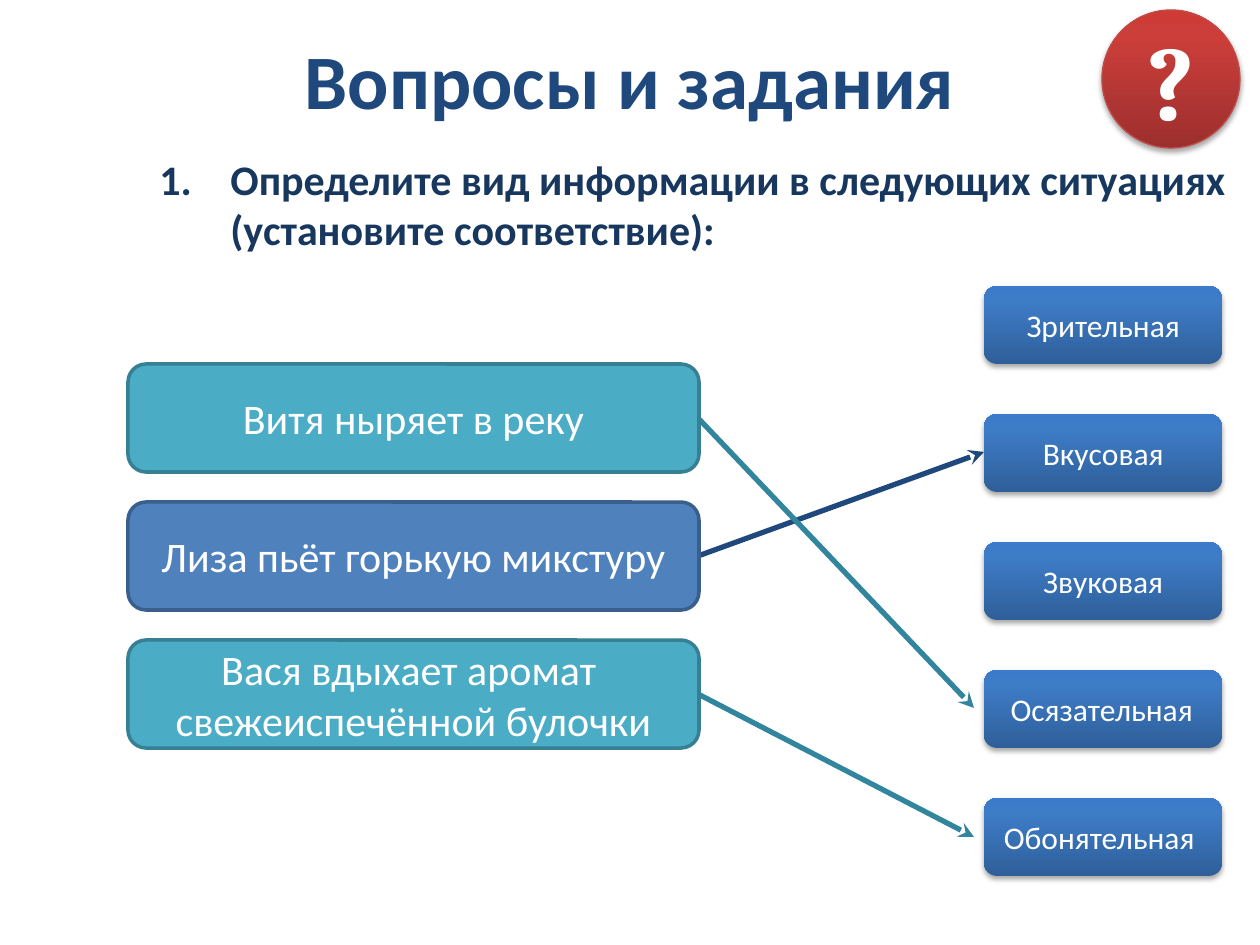
import pptx
import pptx.util
import pptx.dml.color
import pptx.enum.shapes
import pptx.enum.text
import pptx.oxml
import pptx.oxml.ns

# Content
TITLE = "Вопросы и задания"
TASK = "Определите вид информации в следующих ситуациях (установите соответствие):"
STATEMENTS = [  # text, fill, line
    ("Витя ныряет в реку", "teal", "teal_edge"),
    ("Лиза пьёт горькую микстуру", "blue", "blue_edge"),
    ("Вася вдыхает аромат \vсвежеиспечённой булочки", "teal", "teal_edge"),
]
ANSWERS = [  # text, left inset
    ("Зрительная", 13),
    ("Вкусовая", 13),
    ("Звуковая", 13),
    ("Осязательная", 10),
    ("Обонятельная", 5),
]
ARROWS = [  # from, to, colour
    ((669, 679), (974, 837), "teal_arrow"),
    ((698, 556), (984, 452), "navy"),
    ((679, 398), (974, 708), "teal_arrow"),
]
COLORS = {
    "navy": "1F497D", "dark_navy": "17375E", "white": "FFFFFF",
    "teal": "4BACC6", "teal_edge": "377F92", "teal_arrow": "31859C",
    "blue": "4F81BD", "blue_edge": "3A5F8C", "red_edge": "BF4C48",
}
BLUE_STOPS = [(0, "2F5F99"), (80, "3D7CC7"), (100, "3A7CCB")]
RED_STOPS = [(0, "9C2F2D"), (80, "CB3E3A"), (100, "CE3B37")]

SCALE = 914400 / 126
SHAPES = pptx.enum.shapes.MSO_SHAPE
ALIGN = pptx.enum.text.PP_ALIGN
MIDDLE = pptx.enum.text.MSO_ANCHOR.MIDDLE
NS = pptx.oxml.ns.nsdecls("a")


def px(n):
    return pptx.util.Emu(round(n * SCALE))


def box(*lengths):
    return [px(n) for n in lengths]


def rgb(name):
    return pptx.dml.color.RGBColor.from_string(COLORS[name])


def set_text(sp, text, size, color="white", bold=False, font="Calibri", align=ALIGN.CENTER):
    tf = sp.text_frame
    tf.word_wrap = True
    tf.text = text
    p = tf.paragraphs[0]
    p.alignment = align
    for r in p.runs:
        r.font.name = font
        r.font.size = pptx.util.Pt(size)
        r.font.bold = bold
        r.font.color.rgb = rgb(color)
    return tf


def add_box(s, kind, place, text, size, **style):
    sp = s.shapes.add_shape(kind, *box(*place))
    sp.shadow.inherit = False
    set_text(sp, text, size, **style).vertical_anchor = MIDDLE
    return sp


def set_line(sp, color, width):
    sp.line.color.rgb = rgb(color)
    sp.line.width = pptx.util.Pt(width)


def add_gloss(sp, stops):
    """Vertical gradient and a soft shadow below."""
    sp.fill.gradient()
    grad = sp._element.spPr.find(pptx.oxml.ns.qn("a:gradFill"))
    gs = "".join(f'<a:gs pos="{pos * 1000}"><a:srgbClr val="{c}"/></a:gs>' for pos, c in stops)
    new = pptx.oxml.parse_xml(
        f'<a:gradFill {NS} rotWithShape="1"><a:gsLst>{gs}</a:gsLst>'
        '<a:lin ang="16200000" scaled="0"/></a:gradFill>')
    grad.getparent().replace(grad, new)
    effects = sp._element.spPr.find(pptx.oxml.ns.qn("a:effectLst"))
    effects.append(pptx.oxml.parse_xml(
        f'<a:outerShdw {NS} blurRad="40000" dist="23000" dir="5400000" rotWithShape="0">'
        '<a:srgbClr val="000000"><a:alpha val="35000"/></a:srgbClr></a:outerShdw>'))


def main():
    prs = pptx.Presentation()
    prs.slide_width, prs.slide_height = box(1260, 945)
    s = prs.slides.add_slide(prs.slide_layouts[5])

    # Title
    sp = s.shapes.title
    sp.left, sp.top, sp.width, sp.height = box(63, 0, 1134, 157)
    set_text(sp, TITLE, 44, "navy", True).vertical_anchor = MIDDLE

    # Matching arrows
    for start, end, color in ARROWS:
        line = s.shapes.add_connector(
            pptx.enum.shapes.MSO_CONNECTOR.STRAIGHT, *box(*start, *end))
        set_line(line, color, 3)
        line.line._get_or_add_ln().append(
            pptx.oxml.parse_xml(f'<a:tailEnd {NS} type="stealth"/>'))
        line._element.spPr.append(pptx.oxml.parse_xml(f"<a:effectLst {NS}/>"))

    # Numbered task
    sp = s.shapes.add_textbox(*box(147, 147, 1113, 137))
    p = set_text(sp, TASK, 24, "dark_navy", True, align=ALIGN.LEFT).paragraphs[0]
    pPr = p._p.get_or_add_pPr()
    pPr.set("marL", str(px(71)))
    pPr.set("indent", str(-px(71)))
    pPr.append(pptx.oxml.parse_xml(f'<a:buFont {NS} typeface="+mj-lt"/>'))
    pPr.append(pptx.oxml.parse_xml(f'<a:buAutoNum {NS} type="arabicPeriod"/>'))

    # Kinds of information
    for i, (text, inset) in enumerate(ANSWERS):
        sp = add_box(s, SHAPES.ROUNDED_RECTANGLE, (984, 286 + 128 * i, 238, 78), text, 18)
        sp.text_frame.margin_left = px(inset)
        sp.line.fill.background()
        add_gloss(sp, BLUE_STOPS)

    # Question badge
    sp = add_box(s, SHAPES.OVAL, (1102, 10, 138, 138), "?", 60, bold=True, font="Cambria")
    set_line(sp, "red_edge", 0.75)
    add_gloss(sp, RED_STOPS)

    # Situations
    for i, (text, fill, edge) in enumerate(STATEMENTS):
        sp = add_box(s, SHAPES.ROUNDED_RECTANGLE, (128, 364 + 138 * i, 571, 108), text, 24)
        sp.fill.solid()
        sp.fill.fore_color.rgb = rgb(fill)
        set_line(sp, edge, 2)

    prs.save("out.pptx")


if __name__ == "__main__":
    main()
